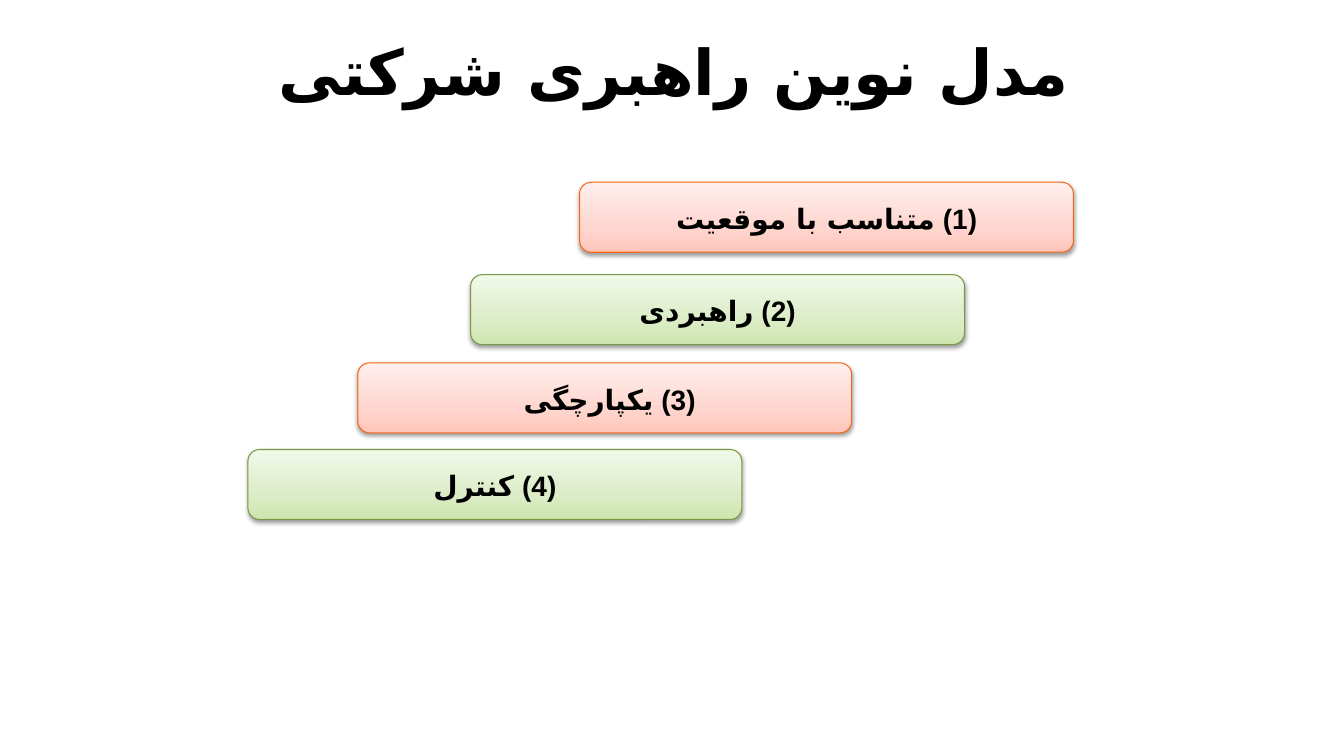
import dataclasses

import pptx
import pptx.dml.color
import pptx.enum.shapes
import pptx.enum.text
import pptx.oxml
import pptx.oxml.ns
import pptx.util

Pt = pptx.util.Pt
RGBColor = pptx.dml.color.RGBColor

BLACK = RGBColor(0x00, 0x00, 0x00)
RED_LINE = RGBColor(0xF9, 0x66, 0x15)
GREEN_LINE = RGBColor(0x7A, 0x97, 0x46)
RED_FADE = (RGBColor(0xFF, 0xC5, 0xBA), RGBColor(0xFF, 0xD6, 0xCF), RGBColor(0xFF, 0xEF, 0xED))
GREEN_FADE = (RGBColor(0xCD, 0xE6, 0xAF), RGBColor(0xDC, 0xEC, 0xC7), RGBColor(0xF1, 0xF9, 0xE9))
STOPS = (0, 35, 100)
SERIF = "Times New Roman"
DIGITS, LETTERS = "Arial", "DejaVu Sans"  # complex-script fonts
BAR_WIDTH, BAR_HEIGHT = 352.8, 50


@dataclasses.dataclass
class Bar:
    mark: str
    text: str
    left: float
    top: float
    fade: tuple[RGBColor, ...]
    line: RGBColor
    font: str = SERIF


BARS = [
    Bar("(4) ", "کنترل", 177.1, 321.1, GREEN_FADE, GREEN_LINE, "Lato"),
    Bar("(3) ", "یکپارچگی ", 255.6, 259.2, RED_FADE, RED_LINE),
    Bar("(2) ", "راهبردی", 336.2, 196.2, GREEN_FADE, GREEN_LINE),
    Bar("(1) ", "متناسب با موقعیت", 414, 130.2, RED_FADE, RED_LINE),
]


def add_node(parent, tag: str, **attrs: str):
    """Append a DrawingML element to its parent."""
    node = pptx.oxml.parse_xml(f"<a:{tag} {pptx.oxml.ns.nsdecls('a')}/>")
    for name, value in attrs.items():
        node.set(name, value)
    parent.append(node)
    return node


def write(shape, parts: dict[str, str], size: float, font: str, space: float = 1) -> None:
    """Write one centred, bold, right-to-left line; parts maps script fonts to text."""
    frame = shape.text_frame
    frame.word_wrap = True
    frame.vertical_anchor = pptx.enum.text.MSO_ANCHOR.MIDDLE
    para = frame.paragraphs[0]
    para.alignment = pptx.enum.text.PP_ALIGN.CENTER
    para.line_spacing = space
    para._p.get_or_add_pPr().set("rtl", "1")
    for script, text in parts.items():
        run = para.add_run()
        run.text = text
        for name, value in {"size": Pt(size), "bold": True, "name": font}.items():
            setattr(run.font, name, value)
        run.font.color.rgb = BLACK
        add_node(run._r.get_or_add_rPr(), "cs", typeface=script)


def shade(shape, fade: tuple[RGBColor, ...]) -> None:
    """Fill a shape with a vertical fade, darkest at the bottom."""
    shape.fill.gradient()
    shape.fill.gradient_angle = 90
    stops = shape._element.spPr.find(".//" + pptx.oxml.ns.qn("a:gsLst"))
    for old in list(stops):
        stops.remove(old)
    for place, color in zip(STOPS, fade):
        stop = add_node(stops, "gs", pos=str(place * 1000))
        add_node(stop, "srgbClr", val=str(color))


def drop_shadow(shape) -> None:
    """Cast a soft shadow straight down."""
    shape.shadow.inherit = False
    effects = shape._element.spPr.find(pptx.oxml.ns.qn("a:effectLst"))
    shadow = add_node(effects, "outerShdw", blurRad=str(int(Pt(3.1))),
                      dist=str(int(Pt(1.6))), dir="5400000", rotWithShape="0")
    color = add_node(shadow, "srgbClr", val=str(BLACK))
    add_node(color, "alpha", val="38000")


def draw_bar(slide, bar: Bar) -> None:
    shape = slide.shapes.add_shape(
        pptx.enum.shapes.MSO_SHAPE.ROUNDED_RECTANGLE,
        Pt(bar.left), Pt(bar.top), Pt(BAR_WIDTH), Pt(BAR_HEIGHT))
    shade(shape, bar.fade)
    shape.line.color.rgb = bar.line
    shape.line.width = Pt(0.75)
    drop_shadow(shape)
    write(shape, {DIGITS: bar.mark, LETTERS: bar.text}, 20, bar.font, 1.06)


def main() -> None:
    deck = pptx.Presentation()
    deck.slide_width, deck.slide_height = Pt(960), Pt(540)
    slide = deck.slides.add_slide(deck.slide_layouts[6])

    # Staircase of bars
    for bar in BARS:
        draw_bar(slide, bar)

    # Title
    title = slide.shapes.add_textbox(Pt(86.4), Pt(28.8), Pt(789.8), Pt(43.2))
    write(title, {LETTERS: "مدل نوین راهبری شرکتی"}, 45, SERIF)

    deck.save("out.pptx")


if __name__ == "__main__":
    main()
